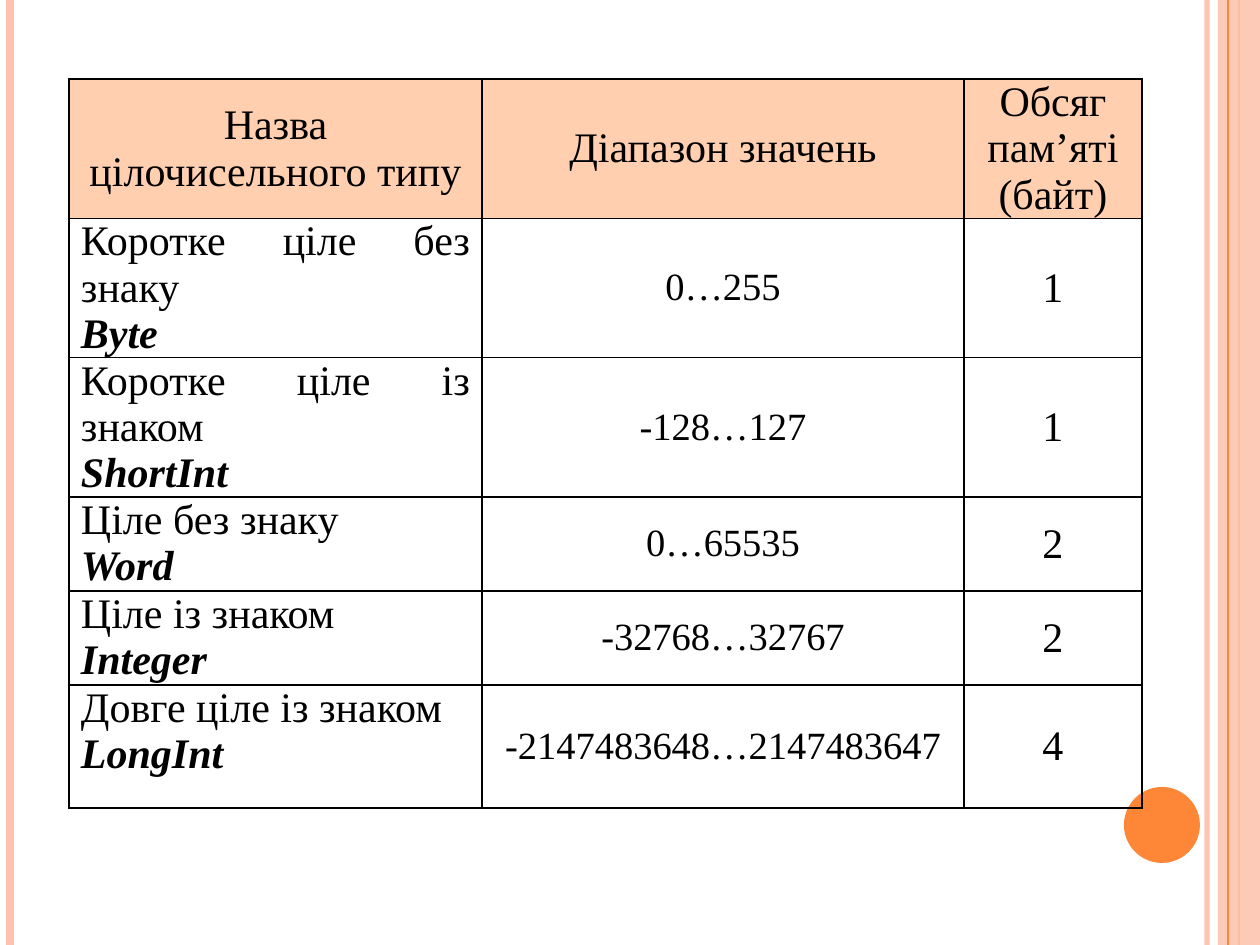
import pptx
import pptx.util
import pptx.dml.color
import pptx.enum.shapes
import pptx.enum.text
import pptx.oxml.ns
from lxml import etree

SCALE = 914400 / 126
HUES = {"ink": "000000", "head": "FFCFAF", "pale": "FEC3AE", "warm": "FE8637"}
ALIGN = pptx.enum.text.PP_ALIGN
ANCHOR = pptx.enum.text.MSO_ANCHOR
KINDS = pptx.enum.shapes.MSO_SHAPE
qn = pptx.oxml.ns.qn


def px(n):
    return pptx.util.Emu(round(n * SCALE))


def hue(name):
    return pptx.dml.color.RGBColor.from_string(HUES[name])


class Deck:
    font = "Times New Roman"

    def __init__(self, wide, high):
        self.prs = pptx.Presentation()
        self.prs.slide_width, self.prs.slide_height = px(wide), px(high)
        self.high = high
        self.slide = self.prs.slides.add_slide(self.prs.slide_layouts[6])

    def fade(self, part, alpha):
        tint = next(part.iter(qn("a:srgbClr")))
        etree.SubElement(tint, qn("a:alpha"), val=str(alpha * 1000))

    def stripe(self, x, color, width, alpha=100):
        line = self.slide.shapes.add_connector(
            pptx.enum.shapes.MSO_CONNECTOR.STRAIGHT, px(x), 0, px(x), px(self.high))
        line.line.color.rgb = hue(color)
        line.line.width = pptx.util.Pt(width)
        props = line._element.spPr
        if alpha < 100:
            self.fade(props, alpha)
        etree.SubElement(props, qn("a:effectLst"))

    def shape(self, kind, x, y, wide, high, color, alpha=100):
        item = self.slide.shapes.add_shape(kind, px(x), px(y), px(wide), px(high))
        item.shadow.inherit = False
        item.fill.solid()
        item.fill.fore_color.rgb = hue(color)
        item.line.fill.background()
        if alpha < 100:
            self.fade(item._element.spPr, alpha)

    def edge(self, cell, side, width):
        line = etree.SubElement(cell._tc.get_or_add_tcPr(), qn("a:ln" + side),
                                w=str(pptx.util.Pt(width)))
        fill = etree.SubElement(line, qn("a:solidFill"))
        etree.SubElement(fill, qn("a:srgbClr"), val=HUES["ink"])

    def cell(self, cell, text, size, align, color=None):
        cell.margin_left = cell.margin_right = px(12)
        cell.margin_top = cell.margin_bottom = 0
        cell.vertical_anchor = ANCHOR.MIDDLE if align == ALIGN.CENTER else ANCHOR.TOP
        if color:
            cell.fill.solid()
            cell.fill.fore_color.rgb = hue(color)
        else:
            cell.fill.background()
        cell.text_frame.text = text
        for para in cell.text_frame.paragraphs:
            para.alignment = align
            para.font.name = self.font
            para.font.size = pptx.util.Pt(size)
            para.font.color.rgb = hue("ink")

    def table(self, x, y, cols, highs, rows):
        frame = self.slide.shapes.add_table(
            len(rows), len(cols), px(x), px(y), px(sum(cols)), px(sum(highs)))
        grid = frame.table
        grid.first_row = grid.horz_banding = False
        for col, wide in zip(grid.columns, cols):
            col.width = px(wide)
        for row, high in zip(grid.rows, highs):
            row.height = px(high)
        for r, row in enumerate(rows):
            for c, text in enumerate(row):
                cell = grid.cell(r, c)
                # Outer edges are thicker than inner ones
                outer = {"L": c == 0, "R": c == len(cols) - 1,
                         "T": r == 0, "B": r == len(rows) - 1}
                for side, thick in outer.items():
                    self.edge(cell, side, 1.5 if thick else 1)
                if r == 0:
                    self.cell(cell, text, 24, ALIGN.CENTER, "head")
                    continue
                self.cell(cell, text, 22 if c == 1 else 24,
                          ALIGN.CENTER if c else ALIGN.JUSTIFY)
                if c == 0:
                    kind = cell.text_frame.paragraphs[-1].font
                    kind.bold = kind.italic = True


deck = Deck(1260, 945)

# Side stripes and dot
deck.stripe(1207, "pale", 3, 93)
deck.stripe(10, "pale", 4.5)
deck.stripe(1239, "warm", 1.5)
deck.shape(KINDS.RECTANGLE, 1218, 0, 42, 945, "pale", 87)
deck.stripe(1228, "warm", 0.75)
deck.shape(KINDS.OVAL, 1124, 787, 76, 76, "warm")

# Integer types
deck.table(69, 79, [413, 482, 178], [118, 94, 94, 94, 94, 123], [
    ("Назва цілочисельного типу", "Діапазон значень", "Обсяг пам’яті\n(байт)"),
    ("Коротке ціле без знаку\nByte", "0…255", "1"),
    ("Коротке ціле із знаком\nShortInt", "-128…127", "1"),
    ("Ціле без знаку\nWord", "0…65535", "2"),
    ("Ціле із знаком\nInteger", "-32768…32767", "2"),
    ("Довге ціле із знаком\nLongInt", "-2147483648…2147483647", "4"),
])

deck.prs.save("out.pptx")
